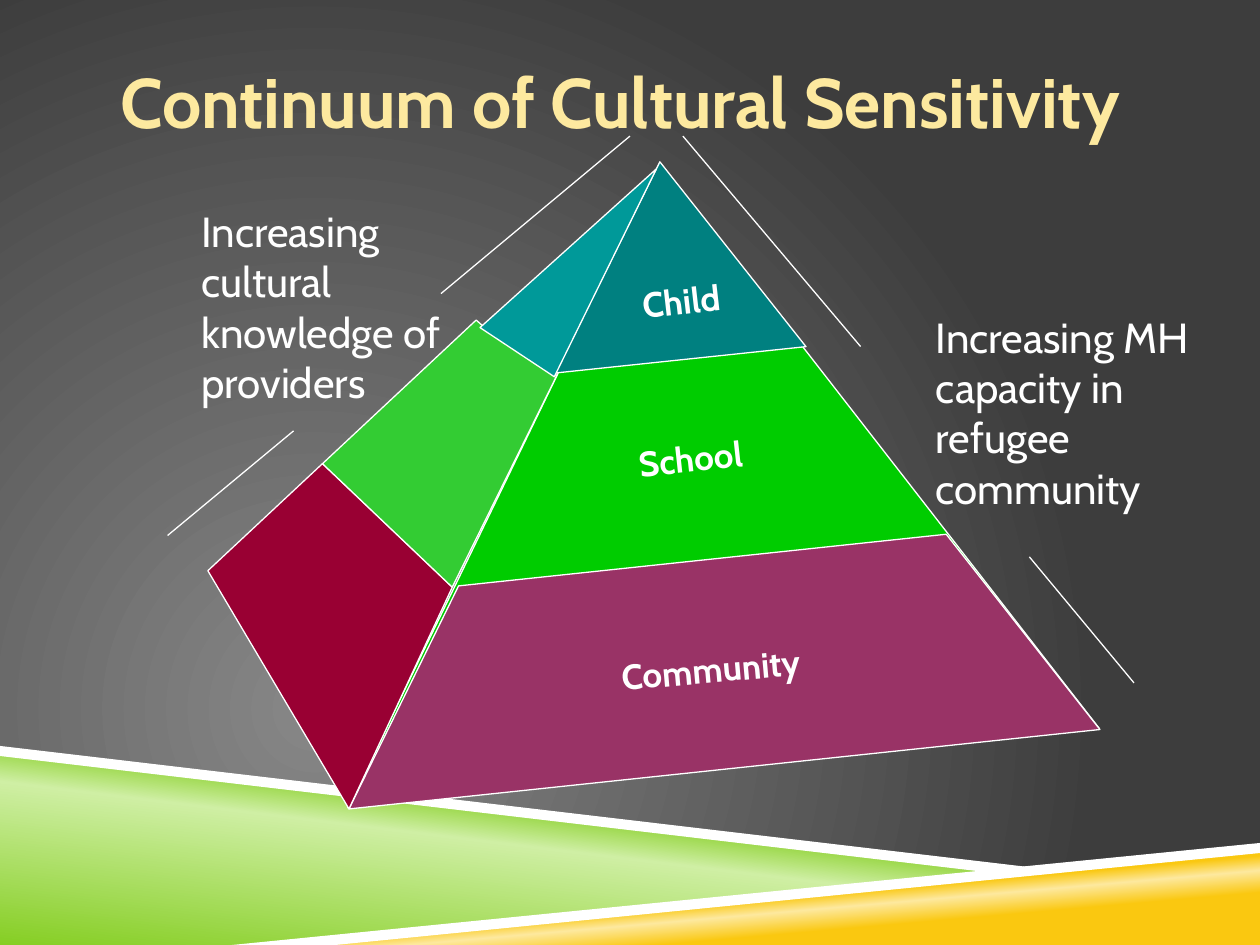
from dataclasses import dataclass

import pptx
import pptx.dml.color
import pptx.enum.shapes
import pptx.enum.text
import pptx.oxml
import pptx.oxml.ns
import pptx.util

Inches = pptx.util.Inches
ALIGN = pptx.enum.text.PP_ALIGN
ANCHOR = pptx.enum.text.MSO_ANCHOR
FONT = "Cabin"
LINE_WIDTH = pptx.util.Pt(0.75)

COLORS = {
    "white": "FFFFFF",
    "title": "FDE99F",
    "glow": "878787",
    "charcoal": "3D3D3D",
    "leaf": "86CE24",
    "pale leaf": "CFEFA4",
    "gold": "FAC810",
    "pale gold": "FDE99F",
    "child front": "008080",
    "child side": "009999",
    "school front": "00CC00",
    "school side": "33CC33",
    "community front": "993366",
    "community side": "990033",
}


@dataclass
class Face:
    color: str
    points: list[tuple[float, float]]


@dataclass
class Triangle:
    color: str
    left: float
    top: float
    width: float
    height: float


@dataclass
class Label:
    text: str
    left: float
    top: float
    width: float
    rotation: float
    align: ALIGN = ALIGN.CENTER


@dataclass
class Guide:
    start: tuple[float, float]
    end: tuple[float, float]


BANDS = [
    Face("leaf", [(0, 5.97), (7.92, 6.92), (2, 7.5), (0, 7.5)]),
    Face("gold", [(1.98, 7.5), (10, 6.72), (10, 7.5)]),
    Face("white", [(0, 5.92), (0, 6), (7.9, 6.93), (8.32, 6.9)]),
    Face("white", [(10, 6.69), (1.84, 7.5), (2.66, 7.5), (10, 6.77)]),
]
BAND_GRADIENTS = {
    "leaf": ([(0, "leaf"), (52, "pale leaf"), (66, "leaf")], 277),
    "gold": ([(28, "gold"), (40, "pale gold"), (48, "gold")], 265),
}
PYRAMID = [
    Triangle("school front", 2.49, 1.28, 6, 4.83),
    Face("community front", [(8.73, 5.79), (7.51, 4.24), (3.64, 4.65), (2.77, 6.42)]),
    Triangle("child front", 4.32, 1.28, 2, 1.58),
    Face("community side", [(2.77, 6.42), (1.65, 4.53), (2.56, 3.68), (3.59, 4.66)]),
    Face("school side", [(4.42, 2.98), (3.87, 2.62), (3.78, 2.54), (2.56, 3.68),
                         (3.59, 4.66)]),
    Face("child side", [(5.21, 1.34), (4.4, 2.99), (3.81, 2.6)]),
]
LABELS = [
    Label("Community", 4.83, 5.08, 1.92, 355, ALIGN.LEFT),
    Label("School", 4.23, 3.42, 2.5, 353.8),
    Label("Child", 4.65, 2.17, 1.51, 353.5),
]
GUIDES = [
    Guide((5.42, 1.08), (6.83, 2.75)),
    Guide((8.17, 4.42), (9, 5.42)),
    Guide((1.33, 4.25), (2.33, 3.42)),
    Guide((3.5, 2.33), (5, 1.08)),
]


def rgb(name: str) -> pptx.dml.color.RGBColor:
    return pptx.dml.color.RGBColor.from_string(COLORS[name])


def set_gradient(owner, stops: list[tuple[int, str]], direction: str) -> None:
    """Swap the solid fill inside owner for a gradient with the given direction XML."""
    solid = owner.find(".//" + pptx.oxml.ns.qn("a:solidFill"))
    stop_xml = "".join(
        f'<a:gs pos="{position * 1000}"><a:srgbClr val="{COLORS[name]}"/></a:gs>'
        for position, name in stops
    )
    gradient = pptx.oxml.parse_xml(
        f'<a:gradFill {pptx.oxml.ns.nsdecls("a")} rotWithShape="1">'
        f"<a:gsLst>{stop_xml}</a:gsLst>{direction}</a:gradFill>"
    )
    solid.getparent().replace(solid, gradient)


def paint_background(slide) -> None:
    slide.background.fill.solid()
    set_gradient(
        slide.element,
        [(0, "glow"), (100, "charcoal")],
        '<a:path path="circle">'
        '<a:fillToRect l="50000" t="100000" r="100000" b="50000"/></a:path>',
    )


def style_shape(shape, color: str, outlined: bool) -> None:
    shape.shadow.inherit = False
    shape.fill.solid()
    shape.fill.fore_color.rgb = rgb(color)
    if outlined:
        shape.line.color.rgb = rgb("white")
        shape.line.width = LINE_WIDTH
    else:
        shape.line.fill.background()


def add_face(slide, face: Face, outlined: bool):
    corners = [(Inches(x), Inches(y)) for x, y in face.points]
    builder = slide.shapes.build_freeform(*corners[0])
    builder.add_line_segments(corners[1:], close=True)
    shape = builder.convert_to_shape()
    style_shape(shape, face.color, outlined)
    return shape


def add_triangle(slide, triangle: Triangle) -> None:
    shape = slide.shapes.add_shape(
        pptx.enum.shapes.MSO_SHAPE.ISOSCELES_TRIANGLE,
        Inches(triangle.left), Inches(triangle.top),
        Inches(triangle.width), Inches(triangle.height),
    )
    shape.rotation = 354
    style_shape(shape, triangle.color, outlined=True)


def add_text(slide, text: str, *, left: float, top: float, width: float, height: float,
             size: int, color: str = "white", bold: bool = False, align=ALIGN.LEFT,
             anchor=ANCHOR.TOP, rotation: float = 0) -> None:
    box = slide.shapes.add_textbox(
        Inches(left), Inches(top), Inches(width), Inches(height))
    box.rotation = rotation
    box.text_frame.word_wrap = True
    box.text_frame.vertical_anchor = anchor
    para = box.text_frame.paragraphs[0]
    para.alignment = align
    span = para.add_run()
    span.text = text
    span.font.name = FONT
    span.font.size = pptx.util.Pt(size)
    span.font.bold = bold
    span.font.color.rgb = rgb(color)


def add_guide(slide, guide: Guide) -> None:
    connector = slide.shapes.add_connector(
        pptx.enum.shapes.MSO_CONNECTOR.STRAIGHT,
        *(Inches(value) for value in guide.start + guide.end),
    )
    connector.line.color.rgb = rgb("white")
    connector.line.width = LINE_WIDTH
    connector.element.spPr.append(pptx.oxml.parse_xml(
        f'<a:effectLst {pptx.oxml.ns.nsdecls("a")}/>'))


def main() -> None:
    deck = pptx.Presentation()
    deck.slide_width, deck.slide_height = Inches(10), Inches(7.5)
    page = deck.slides.add_slide(deck.slide_layouts[6])
    paint_background(page)
    for band in BANDS:
        shape = add_face(page, band, outlined=False)
        if band.color in BAND_GRADIENTS:
            stops, angle = BAND_GRADIENTS[band.color]
            set_gradient(shape.element, stops, f'<a:lin ang="{angle * 60000}" scaled="0"/>')
    add_text(page, "Continuum of Cultural Sensitivity", left=0.42, top=0.17, width=9,
             height=1.25, size=40, color="title", bold=True, align=ALIGN.CENTER,
             anchor=ANCHOR.MIDDLE)
    for part in PYRAMID:
        if isinstance(part, Triangle):
            add_triangle(page, part)
        else:
            add_face(page, part, outlined=True)
    for label in LABELS:
        add_text(page, label.text, left=label.left, top=label.top, width=label.width,
                 height=0.43, size=20, bold=True, align=label.align,
                 rotation=label.rotation)
    add_text(page, "Increasing MH capacity in refugee community",
             left=7.33, top=2.42, width=2.42, height=1.72, size=24)
    add_text(page, "Increasing cultural knowledge of providers",
             left=1.5, top=1.58, width=2.42, height=1.72, size=24)
    for guide in GUIDES:
        add_guide(page, guide)
    deck.save("out.pptx")


if __name__ == "__main__":
    main()
